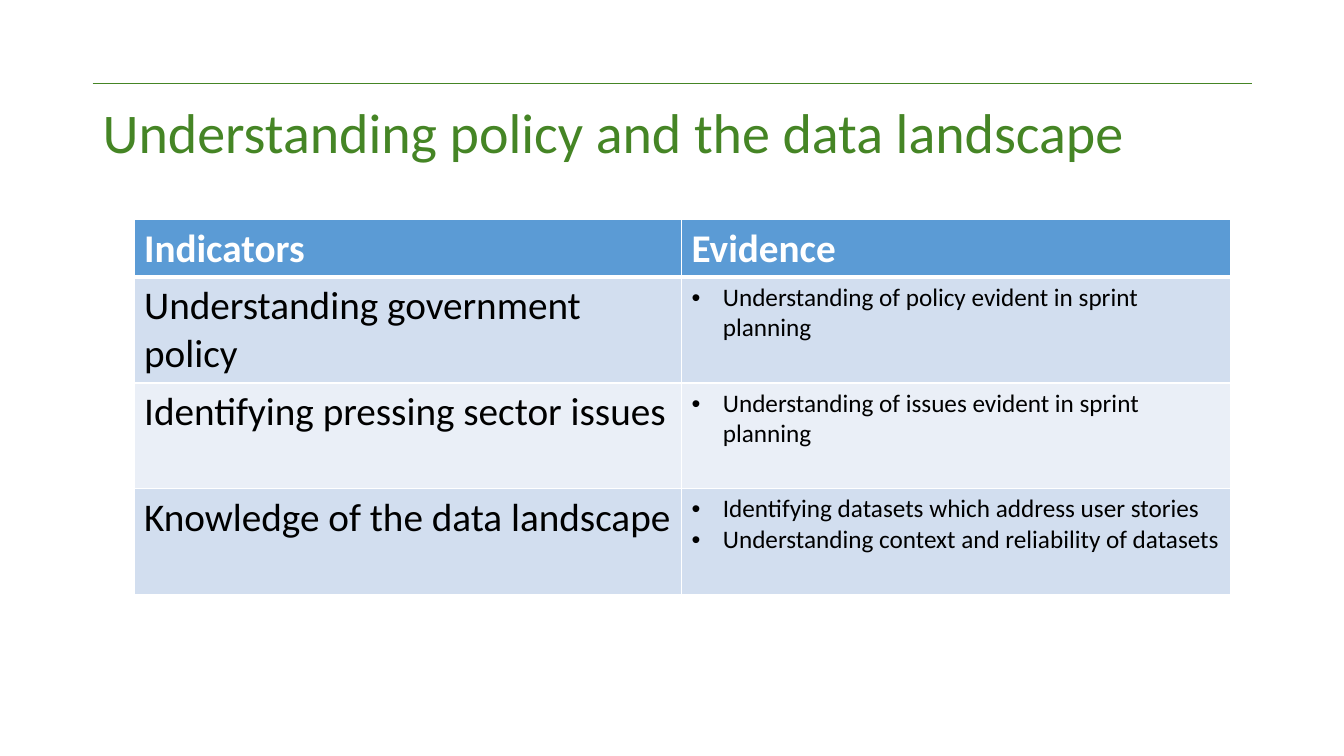
from lxml.etree import SubElement
from pptx import Presentation
from pptx.dml.color import RGBColor
from pptx.enum.shapes import MSO_CONNECTOR
from pptx.enum.text import MSO_ANCHOR
from pptx.oxml.ns import qn
from pptx.util import Inches, Pt

FONT = "Calibri"
GREEN = "458525"
WHITE = "FFFFFF"
BLACK = "000000"
HEADER_FILL = "5B9BD5"
BAND_FILLS = ["D2DEEF", "EAEFF7"]

HEADINGS = ["Indicators", "Evidence"]
ROWS = [
    ("Understanding government policy",
     ["Understanding of policy evident in sprint planning"]),
    ("Identifying pressing sector issues",
     ["Understanding of issues evident in sprint planning"]),
    ("Knowledge of the data landscape",
     ["Identifying datasets which address user stories",
      "Understanding context and reliability of datasets"]),
]


def color(hex_value):
    return RGBColor.from_string(hex_value)


def format_paragraph(paragraph, size, hex_value, bold=False):
    for run in paragraph.runs:
        run.font.name = FONT
        run.font.size = Pt(size)
        run.font.bold = bold
        run.font.color.rgb = color(hex_value)


def add_rule(slide):
    rule = slide.shapes.add_connector(
        MSO_CONNECTOR.STRAIGHT,
        Inches(0.92), Inches(0.83), Inches(12.42), Inches(0.83))
    rule.line.color.rgb = color(GREEN)
    rule.line.width = Pt(0.5)
    SubElement(rule.element.spPr, qn("a:effectLst"))


def add_title(slide, text):
    shape = slide.shapes.add_textbox(
        Inches(0.92), Inches(0.83), Inches(11.5), Inches(1.02))
    text_frame = shape.text_frame
    text_frame.word_wrap = True
    text_frame.vertical_anchor = MSO_ANCHOR.MIDDLE
    text_frame.text = text
    paragraph = text_frame.paragraphs[0]
    paragraph.line_spacing = 0.9
    format_paragraph(paragraph, 40, GREEN)


def add_bullet(paragraph):
    properties = paragraph._p.get_or_add_pPr()
    properties.set("marL", str(Inches(0.31)))
    properties.set("indent", str(-Inches(0.31)))
    SubElement(properties, qn("a:buFont"), typeface="Arial")
    SubElement(properties, qn("a:buChar"), char="•")


def set_borders(cell, top=1, bottom=1):
    """Draw white borders; top and bottom are widths in points."""
    properties = cell._tc.get_or_add_tcPr()
    widths = {"a:lnL": 1, "a:lnR": 1, "a:lnT": top, "a:lnB": bottom}
    for tag, width in widths.items():
        line = SubElement(properties, qn(tag), w=str(Pt(width)))
        fill = SubElement(line, qn("a:solidFill"))
        SubElement(fill, qn("a:srgbClr"), val=WHITE)


def fill_cell(cell, lines, fill, size, text_color=BLACK, bold=False, bulleted=False):
    cell.fill.solid()
    cell.fill.fore_color.rgb = color(fill)
    cell.text_frame.text = "\n".join(lines)
    for paragraph in cell.text_frame.paragraphs:
        if bulleted:
            add_bullet(paragraph)
        format_paragraph(paragraph, size, text_color, bold)


def add_indicator_table(slide):
    table = slide.shapes.add_table(
        len(ROWS) + 1, len(HEADINGS),
        Inches(1.33), Inches(2.18), Inches(10.88), Inches(3.72)).table
    for column, width in zip(table.columns, [5.43, 5.45]):
        column.width = Inches(width)
    for row, height in zip(table.rows, [0.57] + [1.05] * len(ROWS)):
        row.height = Inches(height)

    for column, heading in enumerate(HEADINGS):
        cell = table.cell(0, column)
        set_borders(cell, bottom=3)
        fill_cell(cell, [heading], HEADER_FILL, 28, WHITE, bold=True)

    for index, (indicator, evidence) in enumerate(ROWS):
        band = BAND_FILLS[index % 2]
        left, right = table.rows[index + 1].cells
        for cell in (left, right):
            set_borders(cell, top=3 if index == 0 else 1)
        fill_cell(left, [indicator], band, 28)
        fill_cell(right, evidence, band, 18, bulleted=True)


def main():
    presentation = Presentation()
    presentation.slide_width = Inches(13.33)
    presentation.slide_height = Inches(7.5)
    slide = presentation.slides.add_slide(presentation.slide_layouts[6])
    add_rule(slide)
    add_title(slide, "Understanding policy and the data landscape")
    add_indicator_table(slide)
    presentation.save("out.pptx")


if __name__ == "__main__":
    main()
